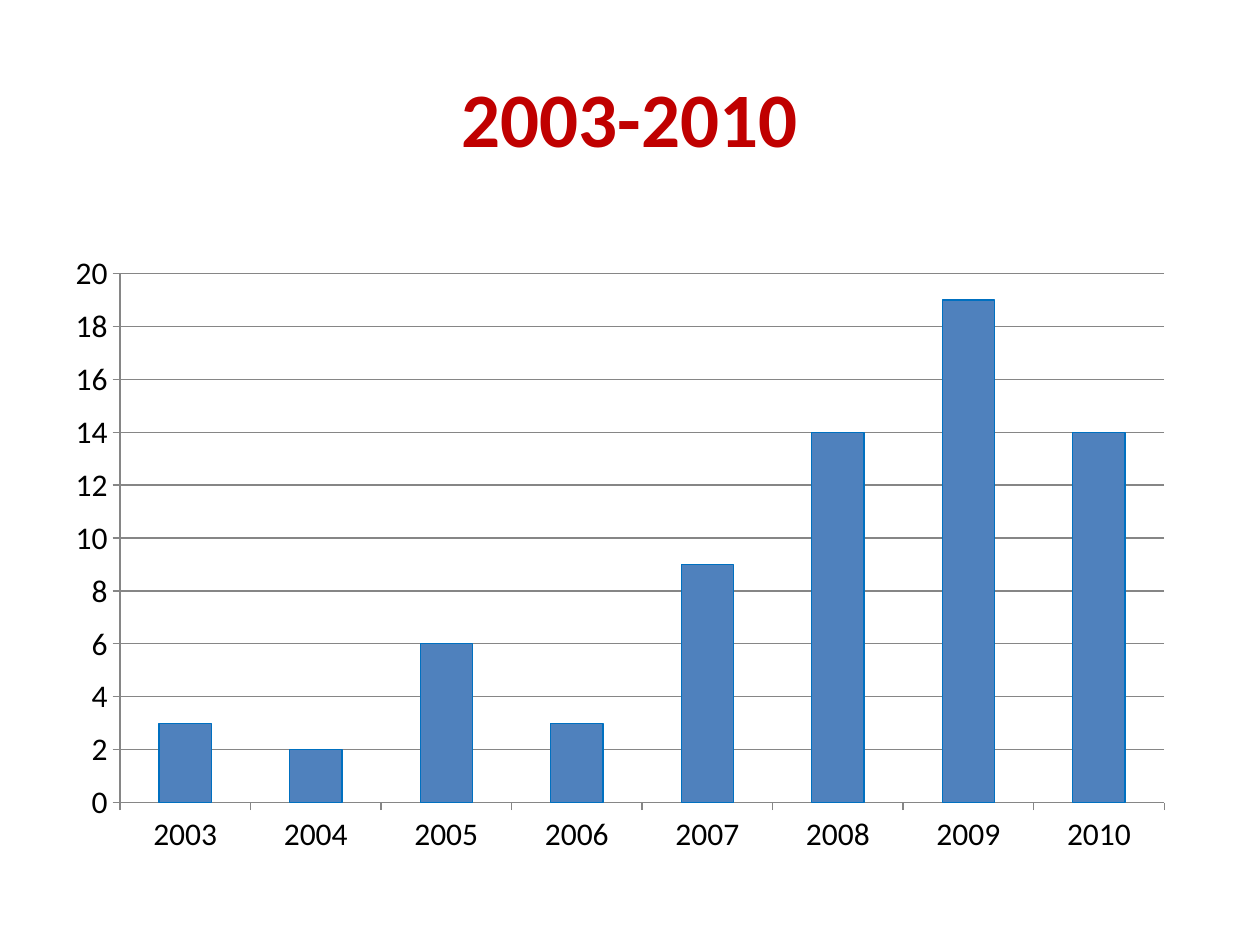
"""Build a slide with a column chart of yearly counts for 2003-2010."""
from pptx import Presentation
from pptx.chart.data import CategoryChartData
from pptx.dml.color import RGBColor
from pptx.enum.chart import XL_CHART_TYPE, XL_TICK_MARK
from pptx.enum.text import MSO_ANCHOR, PP_ALIGN
from pptx.util import Pt

PX = 9144
FONT = "Calibri"


def color(value):
    return RGBColor.from_string(value)


def add_text(page, text, *, left, top, width, height, size, fill, bold=False):
    box = page.shapes.add_textbox(left * PX, top * PX, width * PX, height * PX)
    frame = box.text_frame
    frame.word_wrap = True
    frame.vertical_anchor = MSO_ANCHOR.MIDDLE
    para = frame.paragraphs[0]
    para.alignment = PP_ALIGN.CENTER
    span = para.add_run()
    span.text = text
    span.font.name = FONT
    span.font.size = Pt(size)
    span.font.bold = bold
    span.font.color.rgb = color(fill)


deck = Presentation()
deck.slide_width = 1000 * PX
deck.slide_height = 750 * PX
page = deck.slides.add_slide(deck.slide_layouts[6])

add_text(page, "2003-2010", left=50, top=30, width=900, height=125,
         size=44, fill="C00000", bold=True)

data = CategoryChartData()
data.categories = [str(year) for year in range(2003, 2011)]
data.add_series("Series 1", (3, 2, 6, 3, 9, 14, 19, 14))
chart = page.shapes.add_chart(XL_CHART_TYPE.COLUMN_CLUSTERED, 42 * PX, 192 * PX,
                              900 * PX, 495 * PX, data).chart
chart.has_legend = False
chart.has_title = False
chart.font.name = FONT
chart.font.size = Pt(18)
chart.font.color.rgb = color("000000")

plot = chart.plots[0]
plot.vary_by_categories = False
plot.gap_width = 150
bars = plot.series[0].format
bars.fill.solid()
bars.fill.fore_color.rgb = color("4F81BD")
bars.line.color.rgb = color("0070C0")
bars.line.width = Pt(0.75)

value_axis = chart.value_axis
value_axis.minimum_scale = 0
value_axis.maximum_scale = 20
value_axis.major_unit = 2
value_axis.has_major_gridlines = True
for axis in (chart.category_axis, value_axis):
    axis.major_tick_mark = XL_TICK_MARK.OUTSIDE
    axis.minor_tick_mark = XL_TICK_MARK.NONE
for line in (chart.category_axis.format.line, value_axis.format.line,
             value_axis.major_gridlines.format.line):
    line.color.rgb = color("868686")
    line.width = Pt(0.75)

deck.save("out.pptx")
